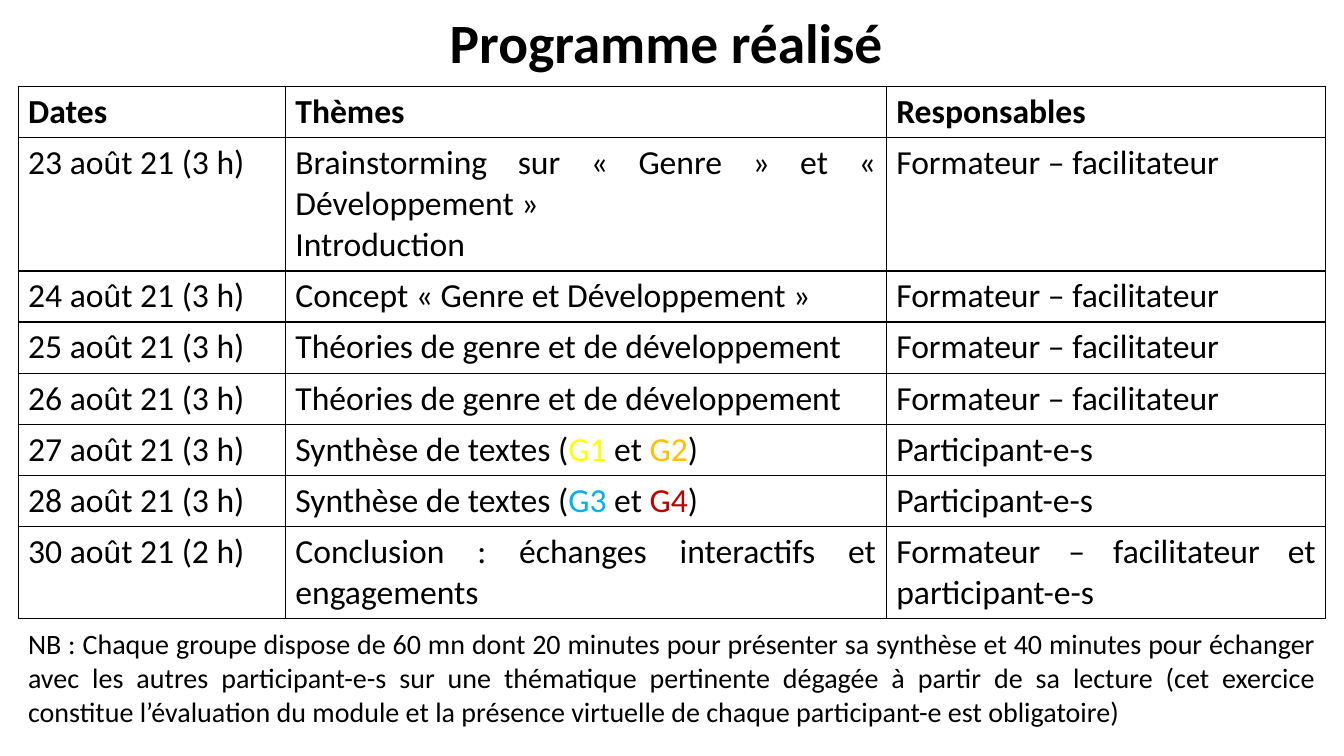
import pptx
import pptx.dml.color
import pptx.enum.text
import pptx.oxml
import pptx.oxml.ns
import pptx.util

ALIGN = pptx.enum.text.PP_ALIGN
ANCHOR = pptx.enum.text.MSO_ANCHOR
BLACK = "000000"


def color(hex_code):
    return pptx.dml.color.RGBColor.from_string(hex_code)


class Deck:
    """Style and current slide; lengths are percentages of the slide's size."""

    font = "Calibri"

    def __init__(self, width, height):
        self.prs = pptx.Presentation()
        self.prs.slide_width = pptx.util.Inches(width)
        self.prs.slide_height = pptx.util.Inches(height)
        self.s = self.prs.slides.add_slide(self.prs.slide_layouts[5])

    def x(self, share):
        return round(self.prs.slide_width * share / 100)

    def y(self, share):
        return round(self.prs.slide_height * share / 100)

    def box(self, left, top, width, height):
        return self.x(left), self.y(top), self.x(width), self.y(height)

    def add_text(self, tf, paragraphs, size, bold=False, align=ALIGN.JUSTIFY):
        """Each paragraph is a list of (text, colour) runs."""
        for i, runs in enumerate(paragraphs):
            p = tf.add_paragraph() if i else tf.paragraphs[0]
            p.alignment = align
            for text, hex_code in runs:
                r = p.add_run()
                r.text = text
                r.font.name = self.font
                r.font.size = pptx.util.Pt(size)
                r.font.bold = bold
                r.font.color.rgb = color(hex_code)

    def title(self, text, area, size):
        sp = self.s.shapes.title
        sp.left, sp.top, sp.width, sp.height = self.box(*area)
        tf = sp.text_frame
        tf.auto_size = pptx.enum.text.MSO_AUTO_SIZE.NONE
        tf.vertical_anchor = ANCHOR.MIDDLE
        self.add_text(tf, [plain(text)], size, True, ALIGN.CENTER)
        tf.paragraphs[0].line_spacing = 0.9

    def note(self, text, area, size):
        tf = self.s.shapes.add_textbox(*self.box(*area)).text_frame
        tf.word_wrap = True
        tf.auto_size = pptx.enum.text.MSO_AUTO_SIZE.SHAPE_TO_FIT_TEXT
        self.add_text(tf, [plain(text)], size)

    def border(self, cell):
        tc_pr = cell._tc.get_or_add_tcPr()
        ns = pptx.oxml.ns.nsdecls("a")
        for side in ("lnL", "lnR", "lnT", "lnB"):
            tc_pr.append(pptx.oxml.parse_xml(
                f'<a:{side} {ns} w="12700"><a:solidFill><a:srgbClr val="{BLACK}"/>'
                f'</a:solidFill></a:{side}>'))

    def table(self, rows, left, top, col_widths, row_heights, size):
        area = self.box(left, top, sum(col_widths), sum(row_heights))
        table = self.s.shapes.add_table(len(rows), len(col_widths), *area).table
        table.horz_banding = False
        for column, width in zip(table.columns, col_widths):
            column.width = self.x(width)
        for i, (row, height) in enumerate(zip(rows, row_heights)):
            table.rows[i].height = self.y(height)
            for cell, paragraphs in zip(table.rows[i].cells, row):
                self.border(cell)
                cell.fill.background()
                self.add_text(cell.text_frame, paragraphs, size, bold=i == 0)


def plain(text):
    return [(text, BLACK)]


def entry(*lines):
    return [plain(line) for line in lines]


def synthesis(first, first_color, second, second_color):
    return [[("Synthèse de textes (", BLACK), (first, first_color), (" et ", BLACK),
             (second, second_color), (")", BLACK)]]


def main():
    deck = Deck(13.33, 7.5)

    # Title
    deck.title("Programme réalisé ", (6.9, 1.87, 86.27, 8.27), 39.6)

    # Programme: date, theme, person in charge
    trainer = entry("Formateur – facilitateur ")
    members = entry("Participant-e-s ")
    theories = entry("Théories de genre et de développement ")
    rows = [
        (entry("Dates"), entry("Thèmes"), entry("Responsables")),
        (entry("23 août 21 (3 h)"),
         entry("Brainstorming sur « Genre » et « Développement » ", "Introduction "),
         trainer),
        (entry("24 août 21 (3 h)"), entry("Concept « Genre et Développement »"), trainer),
        (entry("25 août 21 (3 h)"), theories, trainer),
        (entry("26 août 21 (3 h) "), theories, trainer),
        (entry("27 août 21 (3 h)"), synthesis("G1", "FFFF00", "G2", "FFC000"), members),
        (entry("28 août 21 (3 h) "), synthesis("G3", "00B0F0", "G4", "C00000"), members),
        (entry("30 août 21 (2 h)"),
         entry("Conclusion : échanges interactifs et engagements "),
         entry("Formateur – facilitateur et participant-e-s")),
    ]
    deck.table(rows, 1.35, 11.47, (19.88, 44.71, 32.71), [5.5] * 6 + [6] * 2, 24)

    # Closing remark
    deck.note("NB : Chaque groupe dispose de 60 mn dont 20 minutes pour présenter sa synthèse "
              "et 40 minutes pour échanger avec les autres participant-e-s sur une thématique "
              "pertinente dégagée à partir de sa lecture (cet exercice constitue l’évaluation "
              "du module et la présence virtuelle de chaque participant-e est obligatoire)",
              (1.35, 82.27, 97.3, 14.8), 20)

    deck.prs.save("out.pptx")


if __name__ == "__main__":
    main()
